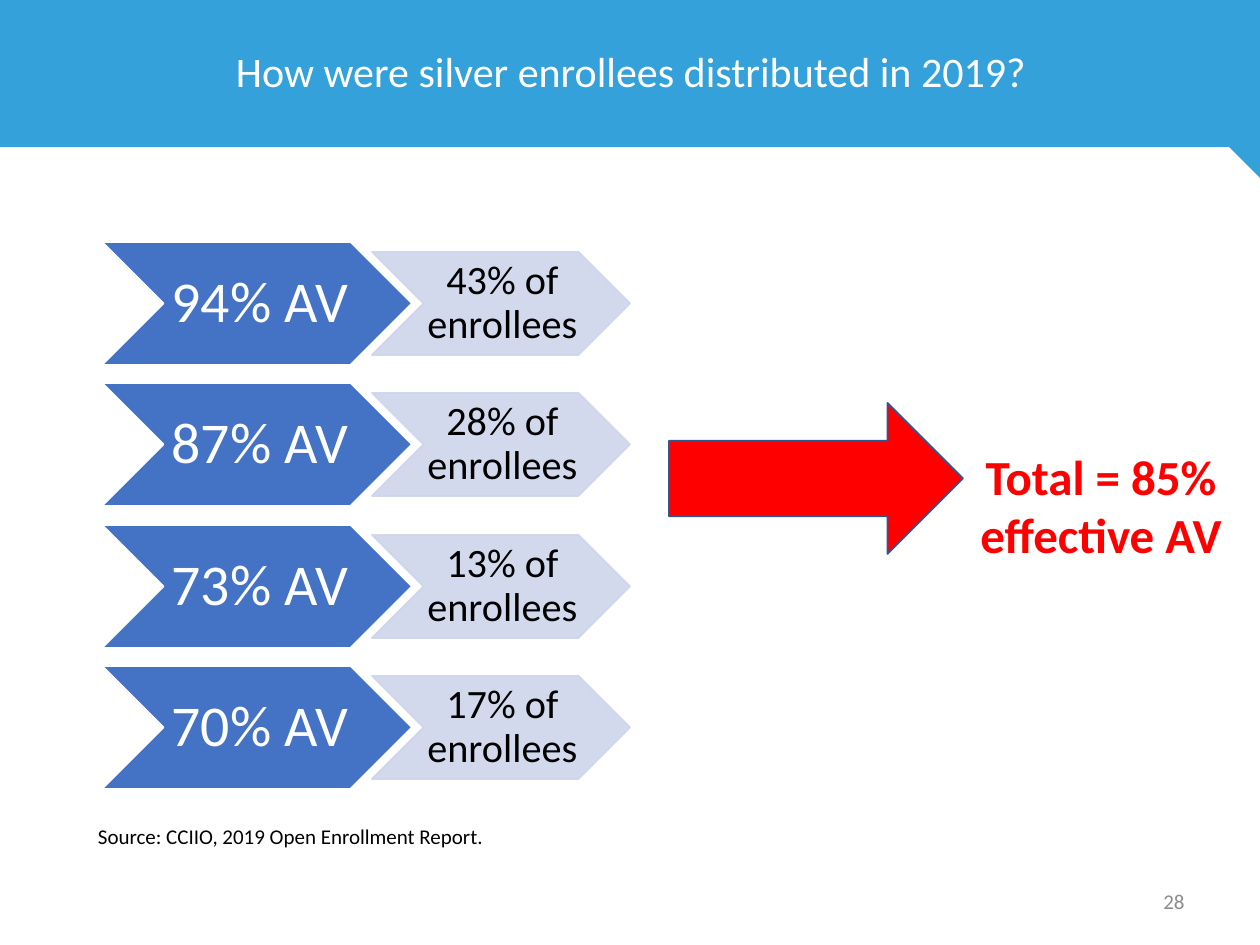
from dataclasses import dataclass
from lxml.etree import SubElement
from pptx import Presentation
from pptx.dml.color import RGBColor
from pptx.enum.shapes import MSO_SHAPE
from pptx.enum.text import MSO_ANCHOR, PP_ALIGN
from pptx.oxml.ns import qn
from pptx.util import Emu, Pt

SCALE = 914400 / 126


@dataclass(frozen=True)
class Theme:
    font: str = "Calibri"
    sky: str = "34A1DA"
    blue: str = "4472C4"
    pale: str = "CFD5EA"
    navy: str = "325491"
    red: str = "FF0000"
    white: str = "FFFFFF"
    black: str = "000000"
    gray: str = "8C8C8C"
    title: int = 24
    level: int = 33
    share: int = 23
    total: int = 28
    small: int = 12


THEME = Theme()
ROWS = [("94%", "43%"), ("87%", "28%"), ("73%", "13%"), ("70%", "17%")]


def px(num):
    return Emu(round(num * SCALE))


def write(shape, text, *, size, color, bold=False, align=PP_ALIGN.CENTER,
          anchor=MSO_ANCHOR.MIDDLE, pads=(13, 6, 13, 6), lines=None):
    """Put text in a shape; pads are left, top, right and bottom."""
    frame = shape.text_frame
    frame.word_wrap = True
    frame.vertical_anchor = anchor
    (frame.margin_left, frame.margin_top,
     frame.margin_right, frame.margin_bottom) = map(px, pads)
    para = frame.paragraphs[0]
    para.alignment = align
    para.line_spacing = lines
    run = para.add_run()
    run.text = text
    font = run.font
    font.name, font.size, font.bold = THEME.font, Pt(size), bold
    font.color.rgb = RGBColor.from_string(color)


def draw(slide, kind, box, fill, line=None, alpha=None):
    shape = slide.shapes.add_shape(kind, *map(px, box))
    shape.shadow.inherit = False
    shape.fill.solid()
    shape.fill.fore_color.rgb = RGBColor.from_string(fill)
    if line:
        shape.line.color.rgb = RGBColor.from_string(line)
        shape.line.width = Pt(1)
    else:
        shape.line.fill.background()
    if alpha:
        for tint in shape._element.spPr.iter(qn("a:srgbClr")):
            SubElement(tint, qn("a:alpha")).set("val", str(alpha * 1000))
    return shape


def label(slide, box, text, **style):
    write(slide.shapes.add_textbox(*map(px, box)), text, **style)


def header(slide, text):
    draw(slide, MSO_SHAPE.RECTANGLE, (0, 0, 1260, 147), THEME.sky)
    fold = draw(slide, MSO_SHAPE.RIGHT_TRIANGLE, (1229, 147, 31, 31), THEME.sky)
    fold.rotation = 180
    title = slide.shapes.title
    title.left, title.top, title.width, title.height = map(px, (67, 0, 1128, 147))
    write(title, text, size=THEME.title, color=THEME.white, lines=0.9)
    # Bring the title in front of the banner
    title._element.getparent().append(title._element)


def row(slide, top, level, share):
    """Draw one plan level and its share of enrollees."""
    plan = draw(slide, MSO_SHAPE.CHEVRON, (102, top, 310, 123),
                THEME.blue, THEME.white)
    write(plan, f"{level} AV", size=THEME.level, color=THEME.white,
          pads=(6, 3, 0, 3), lines=0.9)
    part = draw(slide, MSO_SHAPE.CHEVRON, (372, top + 10, 258, 103),
                THEME.pale, THEME.pale, alpha=90)
    write(part, f"{share} of enrollees", size=THEME.share, color=THEME.black,
          pads=(3, 3, 0, 3), lines=0.9)


def main():
    deck = Presentation()
    deck.slide_width, deck.slide_height = px(1260), px(945)
    slide = deck.slides.add_slide(deck.slide_layouts[5])
    header(slide, "How were silver enrollees distributed in 2019?")
    for num, (level, share) in enumerate(ROWS):
        row(slide, 242 + num * 283 // 2, level, share)
    draw(slide, MSO_SHAPE.RIGHT_ARROW, (669, 403, 294, 151),
         THEME.red, THEME.navy)
    label(slide, (959, 440, 284, 131), "Total = 85% effective AV",
          size=THEME.total, color=THEME.red, bold=True, anchor=MSO_ANCHOR.TOP)
    label(slide, (85, 818, 1009, 38),
          "Source: CCIIO, 2019 Open Enrollment Report.", size=THEME.small,
          color=THEME.black, align=PP_ALIGN.LEFT, anchor=MSO_ANCHOR.TOP)
    label(slide, (1138, 876, 72, 50), "28", size=THEME.small, color=THEME.gray)
    deck.save("out.pptx")


if __name__ == "__main__":
    main()
